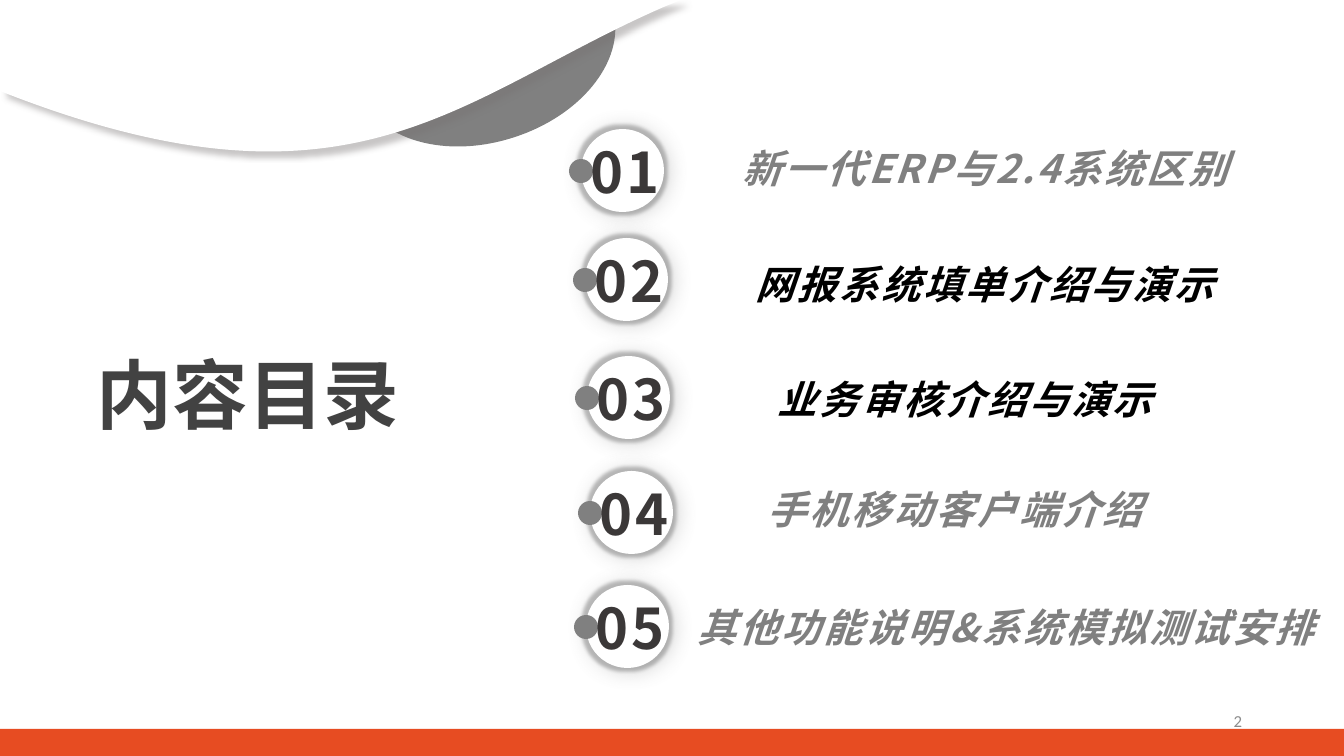
from lxml import etree
from pptx import Presentation
from pptx.dml.color import RGBColor
from pptx.enum import shapes, text
from pptx.oxml import ns

# Content
TITLE = "内容目录"
PAGE_NUMBER = "2"
GREY, BLACK, WHITE = "808080", "000000", "FFFFFF"
# (badge left, badge top, label left, label top, label, label colour)
AGENDA = [
    (581, 129, 668, 144, "新一代ERP与2.4系统区别", GREY),
    (585, 238, 668, 260, "网报系统填单介绍与演示", BLACK),
    (587, 356, 648, 375, "业务审核介绍与演示", BLACK),
    (590, 471, 638, 485, "手机移动客户端介绍", GREY),
    (586, 585, 689, 603, "其他功能说明&系统模拟测试安排", GREY),
]
# Outlines: a point is a line end, three points are a Bézier curve
BLOB = [
    (392, 0), (609, 0), (612, 8),
    ((628, 56), (585, 114), (515, 137)),
    ((446, 160), (376, 140), (360, 92)),
    ((350, 61), (363, 27), (391, 1)),
]
WAVE = [(0, 0), (681, 0), (666, 6), ((458, 96), (355, 231), (0, 91))]
# Boxes around the outlines: left, top, width, height
BLOB_BOX = (357, 0, 258, 147)
WAVE_BOX = (0, 0, 681, 151)
# Shadows: colour, opacity %, blur pt, distance pt, angle
WAVE_SHADOW = ("767171", 40, 4, 6, 45)
BADGE_SHADOW = (GREY, 40, 16, 2, 30)
# Glow: colour, opacity %, radius pt
BADGE_GLOW = (GREY, 50, 5)

# Formats
CJK = "Noto Sans CJK SC"
TITLE_FONT = {"name": CJK, "size": 54, "bold": True, "color": "424242"}
NUMBER_FONT = {"name": CJK, "size": 40, "bold": True, "color": "3B3838"}
LABEL_FONT = {"name": CJK, "size": 28, "bold": True, "italic": True}
PAGE_FONT = {"name": "Calibri", "size": 12, "color": "8C8C8C"}
NO_INSET = {f"margin_{side}": 0 for side in ("left", "right", "top", "bottom")}
FITTED = {"auto_size": text.MSO_AUTO_SIZE.SHAPE_TO_FIT_TEXT}
MIDDLE = {"vertical_anchor": text.MSO_ANCHOR.MIDDLE}

WIDTH, HEIGHT = 1344, 756
SCALE = 12192000 / WIDTH
POINT = 12700


def px(length):
    return round(length * SCALE)


def rgb(colour):
    return RGBColor.from_string(colour)


def add_effect(shape, tag, colour, opacity, **settings):
    effects = shape._element.spPr.find(ns.qn("a:effectLst"))
    values = {name: str(value) for name, value in settings.items()}
    effect = etree.SubElement(effects, ns.qn(tag), values)
    color = etree.SubElement(effect, ns.qn("a:srgbClr"), val=colour)
    etree.SubElement(color, ns.qn("a:alpha"), val=str(opacity * 1000))


def paint(shape, colour, shadow=None, glow=None):
    shape.fill.solid()
    shape.fill.fore_color.rgb = rgb(colour)
    shape.line.fill.background()
    shape.shadow.inherit = False
    if glow:
        tint, opacity, radius = glow
        add_effect(shape, "a:glow", tint, opacity, rad=radius * POINT)
    if shadow:
        tint, opacity, blur, distance, angle = shadow
        add_effect(shape, "a:outerShdw", tint, opacity, blurRad=blur * POINT,
                   dist=distance * POINT, dir=angle * 60000,
                   algn="ctr", rotWithShape=0)


def add_preset(parent, kind, left, top, width, height, colour, **effects):
    shape = parent.add_shape(kind, px(left), px(top), px(width), px(height))
    paint(shape, colour, **effects)


def add_text(parent, left, top, width, height, words, font, frame_format,
             align=text.PP_ALIGN.LEFT, spacing=0):
    box = parent.add_textbox(px(left), px(top), px(width), px(height))
    frame = box.text_frame
    for name, value in {"word_wrap": True, **frame_format}.items():
        setattr(frame, name, value)
    paragraph = frame.paragraphs[0]
    paragraph.alignment = align
    run = paragraph.add_run()
    run.text = words
    for name, value in font.items():
        if name == "color":
            run.font.color.rgb = rgb(value)
        else:
            setattr(run.font, name, value * POINT if name == "size" else value)
    properties = run._r.get_or_add_rPr()
    etree.SubElement(properties, ns.qn("a:ea"), typeface=font["name"])
    if spacing:
        properties.set("spc", str(spacing * 100))


def add_outline(parent, outline, box, colour, shadow=None):
    left, top, width, height = box
    ends = [part[-1] if len(part) == 3 else part for part in outline]
    builder = parent.build_freeform(*ends[0], scale=SCALE)
    builder.add_line_segments(ends[1:], close=True)
    shape = builder.convert_to_shape()
    shape.left, shape.top = px(left), px(top)
    shape.width, shape.height = px(width), px(height)

    # Bend the segments that are curves, measured from the box corner
    outline_path = shape._element.spPr.find(".//" + ns.qn("a:path"))
    outline_path.set("w", str(width))
    outline_path.set("h", str(height))
    for segment, part in zip(list(outline_path), outline):
        curved = len(part) == 3
        if curved:
            curve = etree.Element(ns.qn("a:cubicBezTo"))
            outline_path.replace(segment, curve)
            segment = curve
        for point in list(segment):
            segment.remove(point)
        for x, y in part if curved else [part]:
            etree.SubElement(segment, ns.qn("a:pt"),
                             x=str(x - left), y=str(y - top))
    paint(shape, colour, shadow)


def add_badge(parent, left, top, number):
    group = parent.add_group_shape().shapes
    oval = shapes.MSO_SHAPE.OVAL
    add_preset(group, oval, left, top, 83, 83, WHITE,
               shadow=BADGE_SHADOW, glow=BADGE_GLOW)
    add_preset(group, oval, left - 12, top + 30, 24, 24, GREY)
    add_text(group, left - 14, top + 8, 116, 68, f"{number:02d}", NUMBER_FONT,
             {**NO_INSET, **FITTED, **MIDDLE}, text.PP_ALIGN.CENTER, 2)


def main():
    presentation = Presentation()
    presentation.slide_width = px(WIDTH)
    presentation.slide_height = px(HEIGHT)
    slide = presentation.slides.add_slide(presentation.slide_layouts[6])
    parts = slide.shapes

    # Top decoration, page number and title
    add_outline(parts, BLOB, BLOB_BOX, GREY)
    add_text(parts, 950, 701, 302, 40, PAGE_NUMBER, PAGE_FONT, MIDDLE,
             text.PP_ALIGN.RIGHT)
    add_text(parts, 87, 343, 326, 102, TITLE, TITLE_FONT,
             {**FITTED, "word_wrap": False})
    add_outline(parts, WAVE, WAVE_BOX, WHITE, WAVE_SHADOW)

    # Bottom bar
    add_preset(parts, shapes.MSO_SHAPE.RECTANGLE, 0, 729, WIDTH, 27, "E74C22")

    # Agenda
    for number, entry in enumerate(AGENDA, 1):
        badge_left, badge_top, label_left, label_top, label, colour = entry
        add_badge(parts, badge_left, badge_top, number)
        add_text(parts, label_left, label_top, 634, 47, label,
                 {**LABEL_FONT, "color": colour},
                 {**NO_INSET, **FITTED, **MIDDLE}, text.PP_ALIGN.CENTER, 2)

    presentation.save("out.pptx")


if __name__ == "__main__":
    main()
